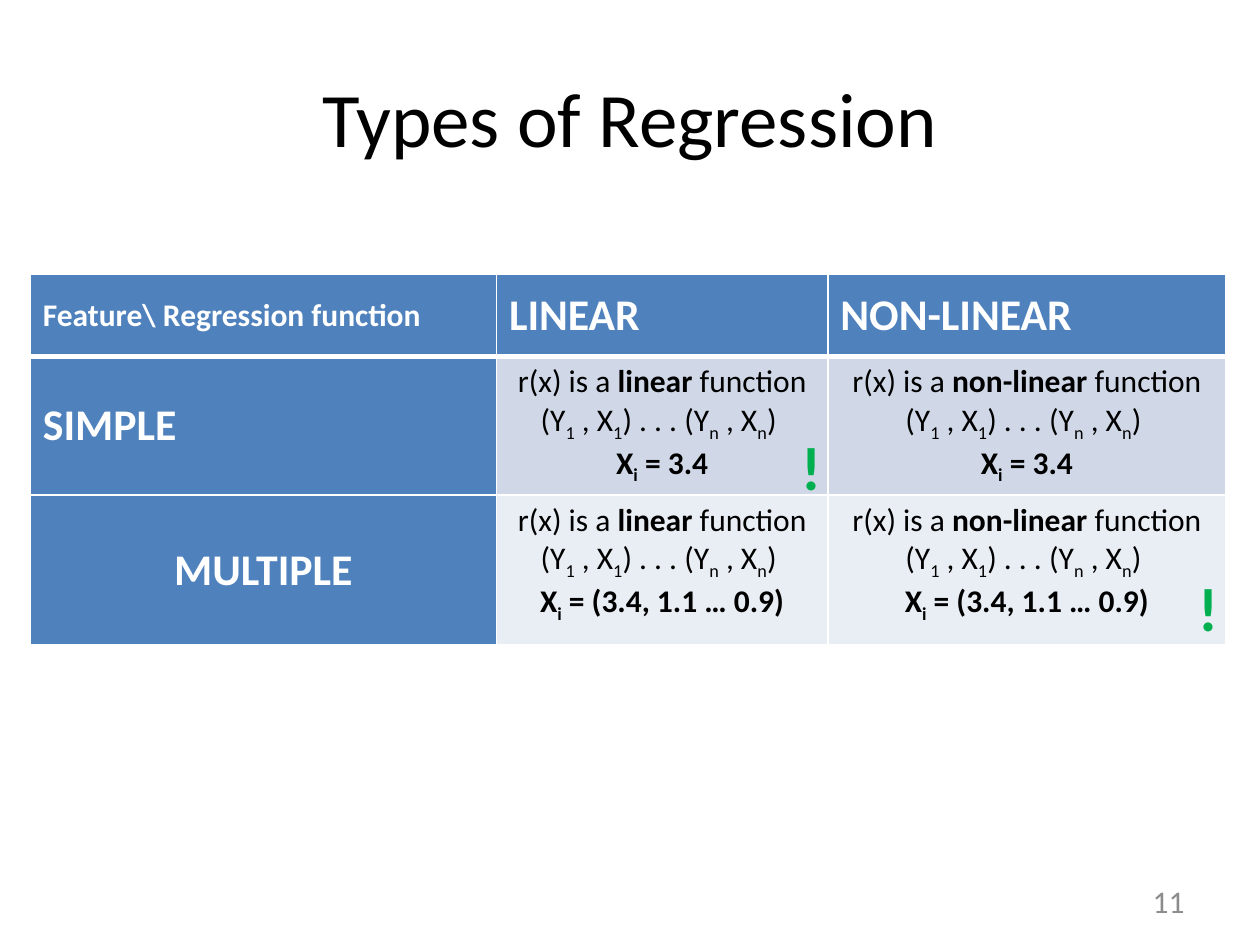
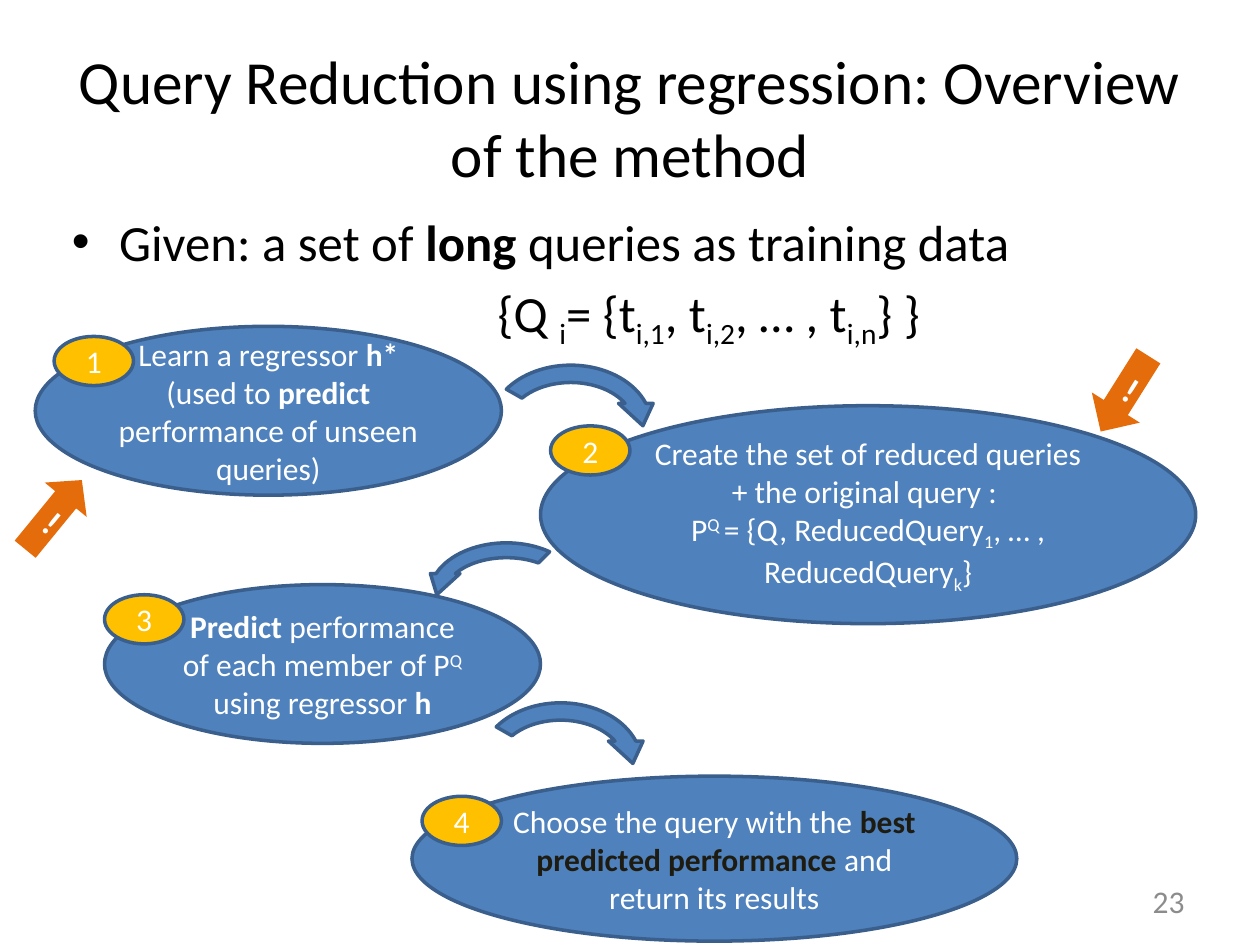
from lxml.etree import SubElement
from pptx import Presentation
from pptx.dml.color import RGBColor
from pptx.enum.shapes import MSO_SHAPE
from pptx.enum.text import MSO_ANCHOR, MSO_AUTO_SIZE, PP_ALIGN
from pptx.oxml import parse_xml
from pptx.oxml.ns import nsdecls, qn
from pptx.util import Inches, Pt

BLACK = RGBColor(0x00, 0x00, 0x00)
WHITE = RGBColor(0xFF, 0xFF, 0xFF)
GREY = RGBColor(0x8C, 0x8C, 0x8C)
GREEN = RGBColor(0x00, 0xB0, 0x50)
BLUE = RGBColor(0x4F, 0x81, 0xBD)
DARK_BLUE = RGBColor(0x3A, 0x5F, 0x8C)
ROW_TINTS = [RGBColor(0xD0, 0xD8, 0xE8), RGBColor(0xE9, 0xED, 0xF4)]
AMBER = RGBColor(0xFF, 0xC0, 0x00)
ORANGE = RGBColor(0xE4, 0x6C, 0x0A)
NEAR_BLACK = RGBColor(0x1E, 0x1C, 0x11)

FONT = "Calibri"
BASELINES = {"sub": "-25000", "sup": "30000"}


def write(paragraph, runs, size, color, align=None, bold=False):
    """Add runs: plain strings, or (text, style) with style bold, dark, sub or sup."""
    paragraph.alignment = align
    for item in runs:
        text, style = (item, "") if isinstance(item, str) else item
        run = paragraph.add_run()
        run.text = text
        emphasis = bold or style in ("bold", "dark")
        for name, value in {"name": FONT, "size": Pt(size), "bold": emphasis}.items():
            setattr(run.font, name, value)
        run.font.color.rgb = NEAR_BLACK if style == "dark" else color
        if style in BASELINES:
            run.font._element.set("baseline", BASELINES[style])


def add_filled_shape(slide, kind, box, fill, paragraphs=(), size=18, outlined=True, bold=False):
    shape = slide.shapes.add_shape(kind, *map(Inches, box))
    shape.shadow.inherit = False
    shape.fill.solid()
    shape.fill.fore_color.rgb = fill
    if outlined:
        shape.line.color.rgb = DARK_BLUE
        shape.line.width = Pt(2)
    else:
        shape.line.fill.background()
    frame = shape.text_frame
    frame.vertical_anchor = MSO_ANCHOR.MIDDLE
    for index, runs in enumerate(paragraphs):
        paragraph = frame.add_paragraph() if index else frame.paragraphs[0]
        write(paragraph, runs, size, WHITE, PP_ALIGN.CENTER, bold)
    return shape


presentation = Presentation()
presentation.slide_width = Inches(10)
presentation.slide_height = Inches(7.5)

# Titles and slide numbers
slides = []
for layout_index, title, title_size, number in [
    (5, "Types of Regression", 44, "11"),
    (1, "Query Reduction using regression: Overview of the method", 35, "23"),
]:
    slide = presentation.slides.add_slide(presentation.slide_layouts[layout_index])
    slides.append(slide)
    title_shape = slide.shapes.title
    for name, value in {"left": 0.5, "top": 0.3, "width": 9, "height": 1.25}.items():
        setattr(title_shape, name, Inches(value))
    frame = title_shape.text_frame
    frame.auto_size = MSO_AUTO_SIZE.NONE
    frame.vertical_anchor = MSO_ANCHOR.MIDDLE
    write(frame.paragraphs[0], [title], title_size, BLACK, PP_ALIGN.CENTER)

    number_box = slide.shapes.add_textbox(Inches(7.17), Inches(6.95), Inches(2.33), Inches(0.4))
    frame = number_box.text_frame
    frame.word_wrap = True
    frame.vertical_anchor = MSO_ANCHOR.MIDDLE
    write(frame.paragraphs[0], [number], 18, GREY, PP_ALIGN.RIGHT)

types_slide, method_slide = slides

# Regression types table
column_widths = [3.7, 2.63, 3.16]
row_heights = [0.65, 1.1, 1.19]
headings = ["Feature\\ Regression function", "LINEAR", "NON-LINEAR"]
features = [("SIMPLE", None, " = 3.4"), ("MULTIPLE", PP_ALIGN.CENTER, " = (3.4, 1.1 … 0.9)")]
sample = ["(Y", ("1", "sub"), " , X", ("1", "sub"), ") . . . (Y", ("n", "sub"),
          " , X", ("n", "sub"), ") "]

table = types_slide.shapes.add_table(
    3, 3, Inches(0.24), Inches(2.18), Inches(sum(column_widths)), Inches(sum(row_heights))
).table
for column, width in zip(table.columns, column_widths):
    column.width = Inches(width)
for row, height in zip(table.rows, row_heights):
    row.height = Inches(height)

for row in range(3):
    for column in range(3):
        cell = table.cell(row, column)
        properties = cell._tc.get_or_add_tcPr()
        for side in ("L", "R", "T", "B"):
            under_header = (row, side) in [(0, "B"), (1, "T")]
            border = SubElement(properties, qn(f"a:ln{side}"), w=str(Pt(3 if under_header else 1)))
            border.append(parse_xml(
                f'<a:solidFill {nsdecls("a")}><a:srgbClr val="{WHITE}"/></a:solidFill>'))
        is_heading = row == 0 or column == 0
        cell.fill.solid()
        cell.fill.fore_color.rgb = BLUE if is_heading else ROW_TINTS[row - 1]
        first = cell.text_frame.paragraphs[0]
        if is_heading:
            cell.vertical_anchor = MSO_ANCHOR.MIDDLE
            text, align = (headings[column], None) if row == 0 else features[row - 1][:2]
            write(first, [text], 18 if row == column else 25, WHITE, align, True) if row == 0 else \
                write(first, [text], 25, WHITE, align, True)
        else:
            function = ["r(x) is a ", (headings[column].lower(), "bold"), " function"]
            write(first, function, 18, BLACK, PP_ALIGN.CENTER)
            write(cell.text_frame.add_paragraph(), sample, 18, BLACK, PP_ALIGN.CENTER)
            write(cell.text_frame.add_paragraph(), ["X", ("i", "sub"), features[row - 1][2]],
                  18, BLACK, PP_ALIGN.CENTER, True)

for left, top in [(6.26, 3.36), (9.41, 4.48)]:
    mark = types_slide.shapes.add_textbox(Inches(left), Inches(top), Inches(0.31), Inches(0.69))
    mark.text_frame.word_wrap = True
    write(mark.text_frame.paragraphs[0], ["!"], 35, GREEN, bold=True)

# Training data
body = method_slide.placeholders[1]
for name, value in {"left": 0.47, "top": 1.62, "width": 9.17, "height": 1.13}.items():
    setattr(body, name, Inches(value))
frame = body.text_frame
frame.auto_size = MSO_AUTO_SIZE.NONE
write(frame.paragraphs[0], ["Given: a set of ", ("long", "bold"), " queries as training data"],
      29, BLACK)
formula = frame.add_paragraph()
write(formula, ["{Q ", ("i", "sub"), "= {t", ("i,1", "sub"), ", t", ("i,2", "sub"),
                ", … , t", ("i,n", "sub"), "} }"], 29, BLACK)
formula_properties = formula._p.get_or_add_pPr()
formula_properties.set("marL", str(Inches(3.38)))
formula_properties.set("indent", "0")
SubElement(formula_properties, qn("a:buNone"))

# Steps of the method, each with its number badge
steps = [
    ((0.28, 2.59, 3.7, 1.34), (0.43, 2.67),
     [["Learn a regressor ", ("h* ", "bold"), "(used to ", ("predict ", "bold"),
       "performance of unseen queries)"]]),
    ((4.29, 3.22, 5.2, 1.73), (4.37, 3.38),
     [["Create the set of reduced queries + the original query : "],
      ["P", ("Q ", "sup"), "= {Q, ReducedQuery", ("1", "sub"), ", … , ReducedQuery",
       ("k", "sub"), "}"]]),
    ((0.83, 4.64, 3.46, 1.26), (0.83, 4.72),
     [[("Predict", "bold"), " performance of each member of P", ("Q ", "sup"),
       "using regressor ", ("h", "bold")]]),
    ((3.27, 6.16, 4.8, 1.31), (3.35, 6.32),
     [["Choose the query with the ", ("best predicted performance", "dark"),
       " and return its results"]]),
]
for box, badge_corner, paragraphs in steps:
    add_filled_shape(method_slide, MSO_SHAPE.OVAL, box, BLUE, paragraphs)
for number, (box, badge_corner, paragraphs) in enumerate(steps, start=1):
    add_filled_shape(method_slide, MSO_SHAPE.OVAL, (*badge_corner, 0.63, 0.39), AMBER,
                     [[str(number)]])

# Curved arrows from step to step
for box, start_angle, flipped in [
    ((3.82, 2.83, 1.42, 1.1), 125.74, False),
    ((3.35, 4.25, 1.34, 0.94), 134.91, True),
    ((3.74, 5.51, 1.42, 1.1), 125.74, False),
]:
    arrow = add_filled_shape(method_slide, MSO_SHAPE.CIRCULAR_ARROW, box, BLUE)
    for index, value in enumerate([0.125, 11.42, 204.58, start_angle, 0.125]):
        arrow.adjustments[index] = value
    if flipped:
        arrow._element.spPr.get_or_add_xfrm().set("flipH", "1")

# Attention arrows
for kind, box, rotation, head in [
    (MSO_SHAPE.UP_ARROW, (0.21, 3.73, 0.43, 0.71), 39.3, 0.47),
    (MSO_SHAPE.DOWN_ARROW, (8.7, 2.77, 0.45, 0.71), 32.2, 0.5),
]:
    arrow = add_filled_shape(method_slide, kind, box, ORANGE, [["!"]], 20, False, True)
    arrow.rotation = rotation
    arrow.adjustments[1] = head

presentation.save("out.pptx")
